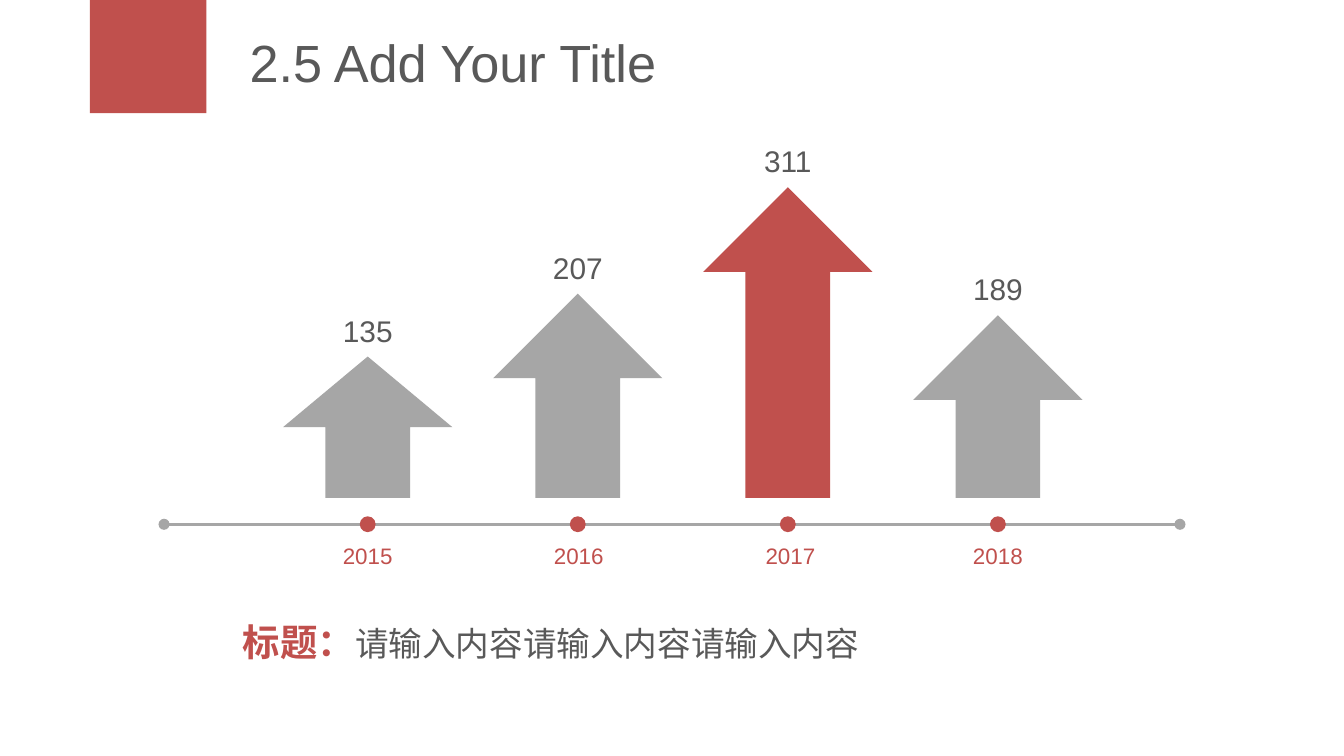
"""Build a slide of yearly values as arrows standing over a timeline."""
from dataclasses import dataclass

from lxml.etree import SubElement
from pptx import Presentation
from pptx.dml.color import RGBColor
from pptx.enum.shapes import MSO_CONNECTOR as Connector, MSO_SHAPE as Preset
from pptx.enum.text import MSO_ANCHOR as Anchor, MSO_AUTO_SIZE as AutoSize, PP_ALIGN as Align
from pptx.oxml.ns import qn
from pptx.shapes.autoshape import Shape
from pptx.slide import Slide
from pptx.util import Cm, Pt


@dataclass(frozen=True)
class Theme:
    accent: RGBColor = RGBColor(0xC0, 0x50, 0x4D)
    muted: RGBColor = RGBColor(0xA6, 0xA6, 0xA6)
    ink: RGBColor = RGBColor(0x59, 0x59, 0x59)
    font: str = "Arial"
    title_size: int = 28
    heading_size: int = 20
    body_size: int = 18
    value_size: int = 16
    year_size: int = 12
    line_width: float = 1.5


@dataclass(frozen=True)
class Box:
    left: float
    top: float
    width: float
    height: float

    def lengths(self) -> tuple[Cm, Cm, Cm, Cm]:
        return Cm(self.left), Cm(self.top), Cm(self.width), Cm(self.height)


@dataclass(frozen=True)
class TextRun:
    text: str
    size: int
    color: RGBColor
    bold: bool = False


@dataclass(frozen=True)
class YearArrow:
    year: str
    value: str
    height: float
    color: RGBColor
    year_shift: float = 0


THEME = Theme()
YEAR_ARROWS = (
    YearArrow("2015", "135", 2.67, THEME.muted),
    YearArrow("2016", "207", 3.86, THEME.muted, 0.02),
    YearArrow("2017", "311", 5.87, THEME.accent, 0.05),
    YearArrow("2018", "189", 3.45, THEME.muted),
)
FIRST_CENTER, CENTER_STEP = 6.95, 3.97
ARROW_WIDTH, ARROW_BOTTOM = 3.2, 9.41
AXIS_LEFT, AXIS_RIGHT, AXIS_TOP = 3.1, 22.3, 9.91
DOT_SIZE = 0.3
VALUE_WIDTH, VALUE_RISE = 2.2, 0.96
YEAR_WIDTH, YEAR_TOP = 1.46, 9.86
LABEL_HEIGHT = 0.94


def add_filled_shape(slide: Slide, preset: Preset, box: Box, color: RGBColor) -> Shape:
    shape = slide.shapes.add_shape(preset, *box.lengths())
    shape.shadow.inherit = False
    shape.fill.solid()
    shape.fill.fore_color.rgb = color
    shape.line.fill.background()
    return shape


def add_text(slide: Slide, box: Box, runs: tuple[TextRun, ...], align: Align = Align.LEFT,
             spacing: float = 1.0, wrap: bool = True, anchor: Anchor = Anchor.TOP,
             auto_size: AutoSize = AutoSize.SHAPE_TO_FIT_TEXT) -> None:
    frame = slide.shapes.add_textbox(*box.lengths()).text_frame
    frame.word_wrap = wrap
    frame.auto_size = auto_size
    frame.vertical_anchor = anchor
    paragraph = frame.paragraphs[0]
    paragraph.alignment = align
    paragraph.line_spacing = spacing
    for text_run in runs:
        run = paragraph.add_run()
        run.text = text_run.text
        run.font.name = THEME.font
        run.font.size = Pt(text_run.size)
        run.font.bold = text_run.bold
        run.font.color.rgb = text_run.color


def add_axis(slide: Slide) -> None:
    axis = slide.shapes.add_connector(
        Connector.STRAIGHT, Cm(AXIS_LEFT), Cm(AXIS_TOP), Cm(AXIS_RIGHT), Cm(AXIS_TOP))
    axis.line.color.rgb = THEME.muted
    axis.line.width = Pt(THEME.line_width)
    line = axis.line._get_or_add_ln()
    for end in ("a:headEnd", "a:tailEnd"):
        SubElement(line, qn(end), type="oval")
    SubElement(axis._element.spPr, qn("a:effectLst"))


def add_year_arrow(slide: Slide, item: YearArrow, center: float) -> None:
    top = ARROW_BOTTOM - item.height
    add_text(slide, Box(center + item.year_shift - YEAR_WIDTH / 2, YEAR_TOP, YEAR_WIDTH, LABEL_HEIGHT),
             (TextRun(item.year, THEME.year_size, THEME.accent),), Align.CENTER, 1.5, wrap=False)
    add_filled_shape(slide, Preset.OVAL, Box(center - DOT_SIZE / 2, AXIS_TOP - DOT_SIZE / 2, DOT_SIZE, DOT_SIZE),
                     THEME.accent)
    add_filled_shape(slide, Preset.UP_ARROW, Box(center - ARROW_WIDTH / 2, top, ARROW_WIDTH, item.height),
                     item.color)
    add_text(slide, Box(center - VALUE_WIDTH / 2, top - VALUE_RISE, VALUE_WIDTH, LABEL_HEIGHT),
             (TextRun(item.value, THEME.value_size, THEME.ink),), Align.CENTER)


def main() -> None:
    presentation = Presentation()
    presentation.slide_width, presentation.slide_height = Cm(25.4), Cm(14.29)
    slide = presentation.slides.add_slide(presentation.slide_layouts[6])
    add_filled_shape(slide, Preset.RECTANGLE, Box(1.7, 0, 2.2, 2.14), THEME.accent)
    add_text(slide, Box(4.47, 0.36, 20.04, 1.6),
             (TextRun("2.5 Add Your Title", THEME.title_size, THEME.ink),),
             anchor=Anchor.MIDDLE, auto_size=AutoSize.NONE)
    add_axis(slide)
    for index, item in enumerate(YEAR_ARROWS):
        add_year_arrow(slide, item, FIRST_CENTER + index * CENTER_STEP)
    add_text(slide, Box(4.34, 11.15, 17.4, 1.4),
             (TextRun("标题：", THEME.heading_size, THEME.accent, bold=True),
              TextRun("请输入内容请输入内容请输入内容", THEME.body_size, THEME.ink)), spacing=1.5)
    presentation.save("out.pptx")


if __name__ == "__main__":
    main()
